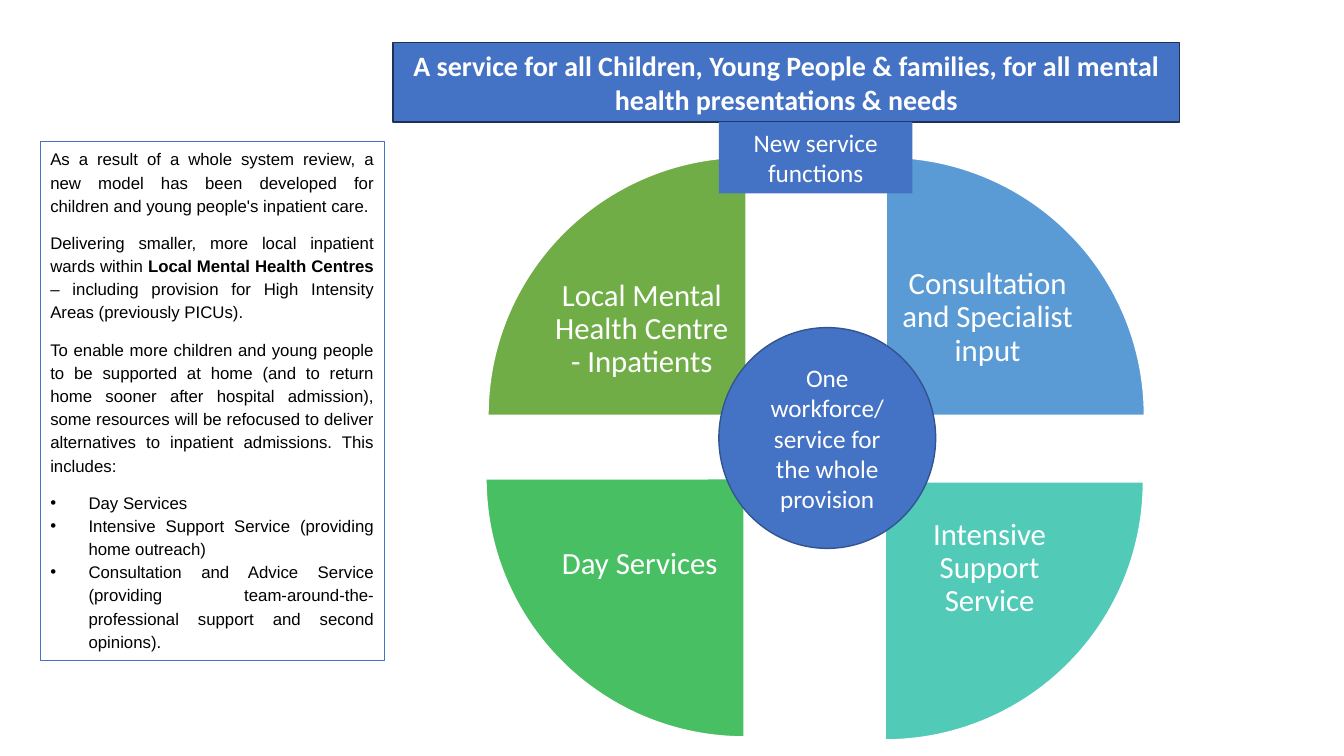
from lxml import etree
from pptx import Presentation
from pptx.dml.color import RGBColor
from pptx.enum.shapes import MSO_SHAPE
from pptx.enum.text import MSO_ANCHOR, MSO_AUTO_SIZE, PP_ALIGN
from pptx.oxml.ns import qn
from pptx.util import Inches, Pt

WHITE = RGBColor(0xFF, 0xFF, 0xFF)
BLACK = RGBColor(0x00, 0x00, 0x00)
BLUE = RGBColor(0x44, 0x72, 0xC4)
CIRCLE_EDGE = RGBColor(0x32, 0x54, 0x91)
BANNER_EDGE = RGBColor(0x1E, 0x32, 0x56)
SKY = RGBColor(0x5B, 0x9B, 0xD5)
TEAL = RGBColor(0x52, 0xCA, 0xB8)
EMERALD = RGBColor(0x49, 0xBF, 0x64)
GREEN = RGBColor(0x70, 0xAD, 0x47)

PIE_SIZE = 5.12
LABEL_SIZE = (1.89, 1.52)
QUARTER_TURN = 54  # 90 degrees in the units of a pie adjustment
BULLET_INDENT = Inches(0.38)

# label, colour, start in quarter turns, pie corner, label corner, anchor, top margin
QUADRANTS = [
    ("Consultation and Specialist input", SKY, 3, (1.41, 0), (4.03, 0.94), MSO_ANCHOR.TOP, 0.16),
    ("Intensive Support Service", TEAL, 0, (1.4, 0.66), (4.05, 3.32), MSO_ANCHOR.MIDDLE, 0.03),
    ("Day Services", EMERALD, 1, (0, 0.63), (0.58, 3.28), MSO_ANCHOR.MIDDLE, 0.03),
    ("Local Mental Health Centre - Inpatients", GREEN, 2, (0.02, 0), (0.6, 0.95),
     MSO_ANCHOR.MIDDLE, 0.03),
]

# Each paragraph is a list of (text, bold) runs
REVIEW_PARAGRAPHS = [
    [("As a result of a whole system review, a new model has been developed for children "
      "and young people's inpatient care.", False)],
    [("Delivering smaller, more local inpatient wards within ", False),
     ("Local Mental Health Centres ", True),
     ("– including provision for High Intensity Areas (previously PICUs).", False)],
    [("To enable more children and young people to be supported at home (and to return home "
      "sooner after hospital admission), some resources will be refocused to deliver "
      "alternatives to inpatient admissions. This includes:", False)],
]
REVIEW_BULLETS = [
    "Day Services",
    "Intensive Support Service (providing home outreach)",
    "Consultation and Advice Service (providing team-around-the-professional support "
    "and second opinions).",
]


def add_panel(slide, preset, box, fill=None, line=None, width=1):
    panel = slide.shapes.add_shape(preset, *(Inches(length) for length in box))
    panel.shadow.inherit = False
    if fill is None:
        panel.fill.background()
    else:
        panel.fill.solid()
        panel.fill.fore_color.rgb = fill
    if line is None:
        panel.line.fill.background()
    else:
        panel.line.color.rgb = line
        panel.line.width = Pt(width)
    panel.text_frame.word_wrap = True
    return panel


def write(paragraph, text, size=18, color=WHITE, font="Calibri", bold=False,
          align=PP_ALIGN.CENTER, spacing=None):
    """Append one formatted run to the paragraph."""
    paragraph.alignment = align
    paragraph.line_spacing = spacing
    run = paragraph.add_run()
    run.text = text
    run.font.size = Pt(size)
    run.font.name = font
    run.font.bold = bold
    run.font.color.rgb = color


def add_bullet(paragraph):
    properties = paragraph._p.get_or_add_pPr()
    properties.set("marL", str(BULLET_INDENT))
    properties.set("indent", str(-BULLET_INDENT))
    etree.SubElement(properties, qn("a:buFont")).set("typeface", "Arial")
    etree.SubElement(properties, qn("a:buChar")).set("char", "•")


def add_review_text(slide, box):
    panel = add_panel(slide, MSO_SHAPE.RECTANGLE, box, line=BLUE, width=0.75)
    frame = panel.text_frame
    frame.auto_size = MSO_AUTO_SIZE.SHAPE_TO_FIT_TEXT
    frame.vertical_anchor = MSO_ANCHOR.TOP
    bullets = [[(text, False)] for text in REVIEW_BULLETS]
    paragraphs = REVIEW_PARAGRAPHS + bullets
    for index, runs in enumerate(paragraphs):
        paragraph = frame.paragraphs[0] if index == 0 else frame.add_paragraph()
        is_bullet = index >= len(REVIEW_PARAGRAPHS)
        if is_bullet:
            add_bullet(paragraph)
        is_last = index == len(paragraphs) - 1
        paragraph.space_after = Pt(0 if is_bullet and not is_last else 10)
        for text, bold in runs:
            write(paragraph, text, size=12, color=BLACK, font="Arial", bold=bold,
                  align=PP_ALIGN.JUSTIFY, spacing=1.15)


def add_quadrant_label(slide, text, box, anchor, top_margin):
    label = slide.shapes.add_textbox(*(Inches(length) for length in box))
    frame = label.text_frame
    frame.word_wrap = True
    frame.vertical_anchor = anchor
    frame.margin_left = frame.margin_right = frame.margin_bottom = Inches(0.03)
    frame.margin_top = Inches(top_margin)
    write(frame.paragraphs[0], text, size=22, spacing=0.9)


def add_service_wheel(slide, left, top):
    """Draw the four quadrants and the hub from the wheel's top left corner."""
    for text, color, start, pie_corner, label_corner, anchor, top_margin in QUADRANTS:
        pie_box = (left + pie_corner[0], top + pie_corner[1], PIE_SIZE, PIE_SIZE)
        pie = add_panel(slide, MSO_SHAPE.PIE, pie_box, fill=color, line=WHITE)
        pie.adjustments[0] = start * QUARTER_TURN
        pie.adjustments[1] = (start + 1) % 4 * QUARTER_TURN
        label_box = (left + label_corner[0], top + label_corner[1], *LABEL_SIZE)
        add_quadrant_label(slide, text, label_box, anchor, top_margin)
    hub = add_panel(slide, MSO_SHAPE.FLOWCHART_CONNECTOR, (left + 2.31, top + 1.69, 2.15, 2.19),
                    fill=BLUE, line=CIRCLE_EDGE)
    hub.text_frame.vertical_anchor = MSO_ANCHOR.MIDDLE
    write(hub.text_frame.paragraphs[0], "One workforce/ service for the whole provision")


def add_heading(slide, left, top):
    """Draw the banner with the functions tab hanging below it."""
    banner_height = 0.79
    banner = add_panel(slide, MSO_SHAPE.RECTANGLE, (left, top, 7.8, banner_height),
                       fill=BLUE, line=BANNER_EDGE)
    banner.text_frame.vertical_anchor = MSO_ANCHOR.MIDDLE
    write(banner.text_frame.paragraphs[0],
          "A service for all Children, Young People & families, "
          "for all mental health presentations & needs", size=20, bold=True)
    tab = add_panel(slide, MSO_SHAPE.RECTANGLE,
                    (left + 3.23, top + banner_height, 1.92, 0.71), fill=BLUE)
    tab.text_frame.auto_size = MSO_AUTO_SIZE.SHAPE_TO_FIT_TEXT
    tab.text_frame.vertical_anchor = MSO_ANCHOR.TOP
    write(tab.text_frame.paragraphs[0], "New service functions")


def main():
    presentation = Presentation()
    presentation.slide_width = Inches(13.33)
    presentation.slide_height = Inches(7.5)
    slide = presentation.slides.add_slide(presentation.slide_layouts[6])
    add_service_wheel(slide, 4.82, 1.56)
    add_heading(slide, 3.9, 0.42)
    add_review_text(slide, (0.4, 1.4, 3.41, 5.15))
    presentation.save("out.pptx")


if __name__ == "__main__":
    main()
